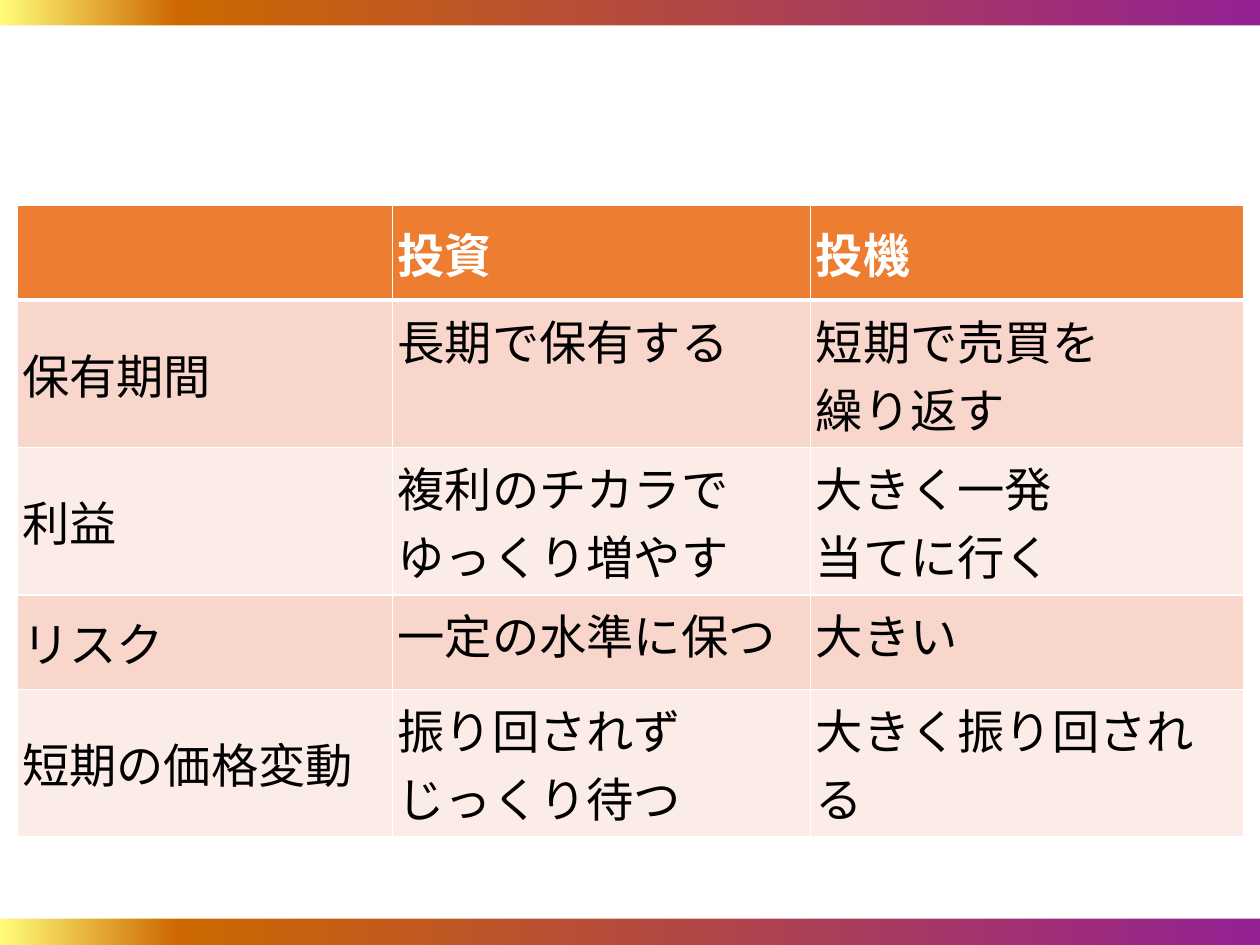
from copy import deepcopy

from lxml.etree import SubElement
from pptx import Presentation
from pptx.dml.color import RGBColor
from pptx.enum.shapes import MSO_SHAPE
from pptx.enum.text import MSO_ANCHOR
from pptx.oxml.ns import qn
from pptx.util import Pt

HEADINGS = ("", "投資", "投機")
COMPARISONS = [
    ("保有期間", "長期で保有する", "短期で売買を\n繰り返す"),
    ("利益", "複利のチカラで\nゆっくり増やす", "大きく一発\n当てに行く"),
    ("リスク", "一定の水準に保つ", "大きい"),
    ("短期の価格変動", "振り回されず\nじっくり待つ", "大きく振り回される"),
]

THEME = {
    "font": "Noto Sans CJK JP",
    "size": 27,
    "white": "FFFFFF",
    "black": "000000",
    "header": "ED7D31",
    "bands": ("F8D6CC", "FCECE7"),
    "gradient": ((0, "FFFC79"), (0.14, "CD6900"), (1, "942193")),
    "line": 1,
    "header_line": 3,
}

SLIDE_WIDTH, SLIDE_HEIGHT = 720, 540
PANEL_TOP, PANEL_HEIGHT = 14.5, 510.5
TABLE_LEFT, TABLE_TOP = 9.7, 117.5
COLUMN_WIDTHS = (214.5, 239, 247.5)
SHORT_ROW, TALL_ROW = 54, 69
ROW_HEIGHTS = (SHORT_ROW, TALL_ROW, TALL_ROW, SHORT_ROW, TALL_ROW)
CELL_FORMAT = {
    f"margin_{side}": Pt(3) for side in ("left", "right", "top", "bottom")
}


def rgb(code):
    return RGBColor.from_string(code)


def paint_background(slide):
    fill = slide.background.fill
    fill.gradient()
    stop_list = next(slide.element.iter(qn("a:gsLst")))
    stop_list.append(deepcopy(stop_list[-1]))
    for stop, (position, color) in zip(fill.gradient_stops, THEME["gradient"]):
        stop.position = position
        stop.color.rgb = rgb(color)
    fill.gradient_angle = 0


def add_panel(slide):
    panel = slide.shapes.add_shape(
        MSO_SHAPE.RECTANGLE, 0, Pt(PANEL_TOP), Pt(SLIDE_WIDTH), Pt(PANEL_HEIGHT)
    )
    panel.shadow.inherit = False
    panel.fill.solid()
    panel.fill.fore_color.rgb = rgb(THEME["white"])
    panel.line.fill.background()


def add_borders(cell, row):
    properties = cell._tc.get_or_add_tcPr()
    widths = {
        "L": THEME["line"],
        "R": THEME["line"],
        "T": THEME["header_line" if row == 1 else "line"],
        "B": THEME["header_line" if row == 0 else "line"],
    }
    for side, width in widths.items():
        border = SubElement(properties, qn(f"a:ln{side}"), w=str(Pt(width)))
        solid = SubElement(border, qn("a:solidFill"))
        SubElement(solid, qn("a:srgbClr"), val=THEME["white"])


def write_cell(cell, wording, is_header):
    cell.text = wording
    font_format = {
        "name": THEME["font"],
        "size": Pt(THEME["size"]),
        "bold": is_header,
    }
    for paragraph in cell.text_frame.paragraphs:
        for run in paragraph.runs:
            for attribute, value in font_format.items():
                setattr(run.font, attribute, value)
            run.font.color.rgb = rgb(THEME["white" if is_header else "black"])
            east_asian = SubElement(run._r.get_or_add_rPr(), qn("a:ea"))
            east_asian.set("typeface", THEME["font"])


def add_comparison_table(slide):
    rows = [HEADINGS, *COMPARISONS]
    table = slide.shapes.add_table(
        len(rows), len(HEADINGS), Pt(TABLE_LEFT), Pt(TABLE_TOP),
        Pt(sum(COLUMN_WIDTHS)), Pt(sum(ROW_HEIGHTS)),
    ).table
    for column, width in zip(table.columns, COLUMN_WIDTHS):
        column.width = Pt(width)
    for table_row, height in zip(table.rows, ROW_HEIGHTS):
        table_row.height = Pt(height)

    for r, wordings in enumerate(rows):
        is_header = r == 0
        fill_color = THEME["header"] if is_header else THEME["bands"][(r - 1) % 2]
        for c, wording in enumerate(wordings):
            cell = table.cell(r, c)
            write_cell(cell, wording, is_header)
            for attribute, value in CELL_FORMAT.items():
                setattr(cell, attribute, value)
            centred = is_header or c == 0
            cell.vertical_anchor = MSO_ANCHOR.MIDDLE if centred else MSO_ANCHOR.TOP
            add_borders(cell, r)
            cell.fill.solid()
            cell.fill.fore_color.rgb = rgb(fill_color)


def main():
    presentation = Presentation()
    presentation.slide_width = Pt(SLIDE_WIDTH)
    presentation.slide_height = Pt(SLIDE_HEIGHT)
    slide = presentation.slides.add_slide(presentation.slide_layouts[6])
    paint_background(slide)
    add_panel(slide)
    add_comparison_table(slide)
    presentation.save("out.pptx")


if __name__ == "__main__":
    main()
